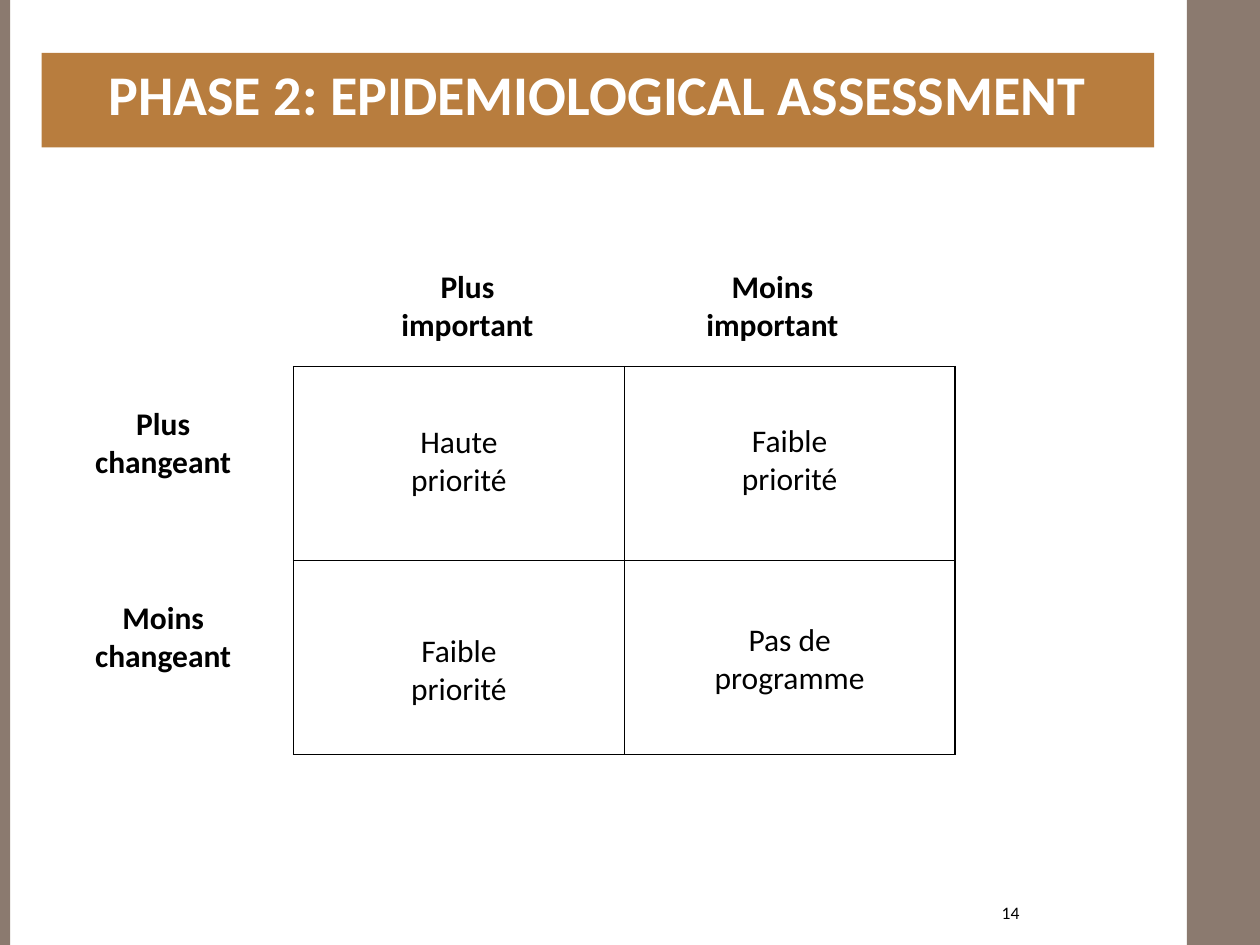
from lxml.etree import SubElement
from pptx import Presentation
from pptx.dml.color import RGBColor
from pptx.enum.shapes import MSO_SHAPE
from pptx.enum.text import PP_ALIGN
from pptx.oxml.ns import qn
from pptx.util import Inches, Pt

BLACK = RGBColor(0x00, 0x00, 0x00)
WHITE = RGBColor(0xFF, 0xFF, 0xFF)
BROWN = RGBColor(0xB8, 0x7D, 0x3E)
TAUPE = RGBColor(0x8B, 0x7A, 0x6F)

CELLS = [
    [("Haute\npriorité", 0.45), ("Faible\npriorité", 0.44)],
    [("Faible\npriorité", 0.57), ("Pas de\nprogramme", 0.48)],
]


def set_text(frame, text, size, color=BLACK, bold=False, align=PP_ALIGN.CENTER):
    frame.text = text
    for para in frame.paragraphs:
        para.alignment = align
        for run in para.runs:
            run.font.name = "Calibri"
            run.font.size = Pt(size)
            run.font.bold = bold
            run.font.color.rgb = color


def set_pads(frame, left=0, top=0):
    frame.margin_left, frame.margin_top = Inches(left), Inches(top)
    frame.margin_right = frame.margin_bottom = 0


def add_box(slide, box, color):
    shape = slide.shapes.add_shape(MSO_SHAPE.RECTANGLE, *map(Inches, box))
    shape.shadow.inherit = False
    shape.fill.solid()
    shape.fill.fore_color.rgb = color
    shape.line.fill.background()
    return shape


def add_label(slide, box, text, size=18, bold=True, align=PP_ALIGN.CENTER):
    frame = slide.shapes.add_textbox(*map(Inches, box)).text_frame
    set_pads(frame, top=0.02 if bold else 0)
    frame.word_wrap = True
    set_text(frame, text, size, bold=bold, align=align)
    return frame


def add_title(slide, box):
    frame = add_box(slide, box, BROWN).text_frame
    set_pads(frame, 0.53, 0.05)
    frame.word_wrap = True
    frame.vertical_anchor = 1
    set_text(frame, "PHASE 2: EPIDEMIOLOGICAL ASSESSMENT", 32, WHITE, True, PP_ALIGN.LEFT)


def add_rules(cell):
    props = cell._tc.get_or_add_tcPr()
    for side in ("lnL", "lnR", "lnT", "lnB"):
        line = SubElement(props, qn(f"a:{side}"), w=str(Pt(1)))
        fill = SubElement(line, qn("a:solidFill"))
        SubElement(fill, qn("a:srgbClr"), val=str(BLACK))


def add_grid(slide, box):
    table = slide.shapes.add_table(2, 2, *map(Inches, box)).table
    table.first_row = table.horz_banding = False
    for row, items in enumerate(CELLS):
        for col, (text, top) in enumerate(items):
            cell = table.cell(row, col)
            set_pads(cell, top=top)
            set_text(cell.text_frame, text, 18)
            add_rules(cell)
            cell.fill.background()


def add_matrix(slide, box):
    left, top, width, height = box
    add_grid(slide, box)
    for step, word in enumerate(("Plus", "Moins")):
        side = (left - 1.59, top + 0.28 + step * height / 2, 1.11, 0.63)
        head = (left + 0.84 + step * 2.42, top - 0.81, 1.08, 0.63)
        add_label(slide, side, f"{word}\nchangeant")
        add_label(slide, head, f"{word}\nimportant")


def add_number(slide, box):
    frame = add_label(slide, box, "14", 10, False, PP_ALIGN.LEFT)
    frame.margin_left = Inches(0.04)
    frame.paragraphs[0].line_spacing = Pt(10.4)


def main():
    deck = Presentation()
    deck.slide_width, deck.slide_height = Inches(10), Inches(7.5)
    slide = deck.slides.add_slide(deck.slide_layouts[6])
    add_box(slide, (9.42, 0, 0.58, 7.5), TAUPE)
    add_box(slide, (0, 0, 0.08, 7.5), TAUPE)
    add_title(slide, (0.33, 0.42, 8.83, 0.75))
    add_matrix(slide, (2.33, 2.91, 5.25, 3.08))
    add_number(slide, (7.91, 7.18, 0.22, 0.17))
    deck.save("out.pptx")


if __name__ == "__main__":
    main()
